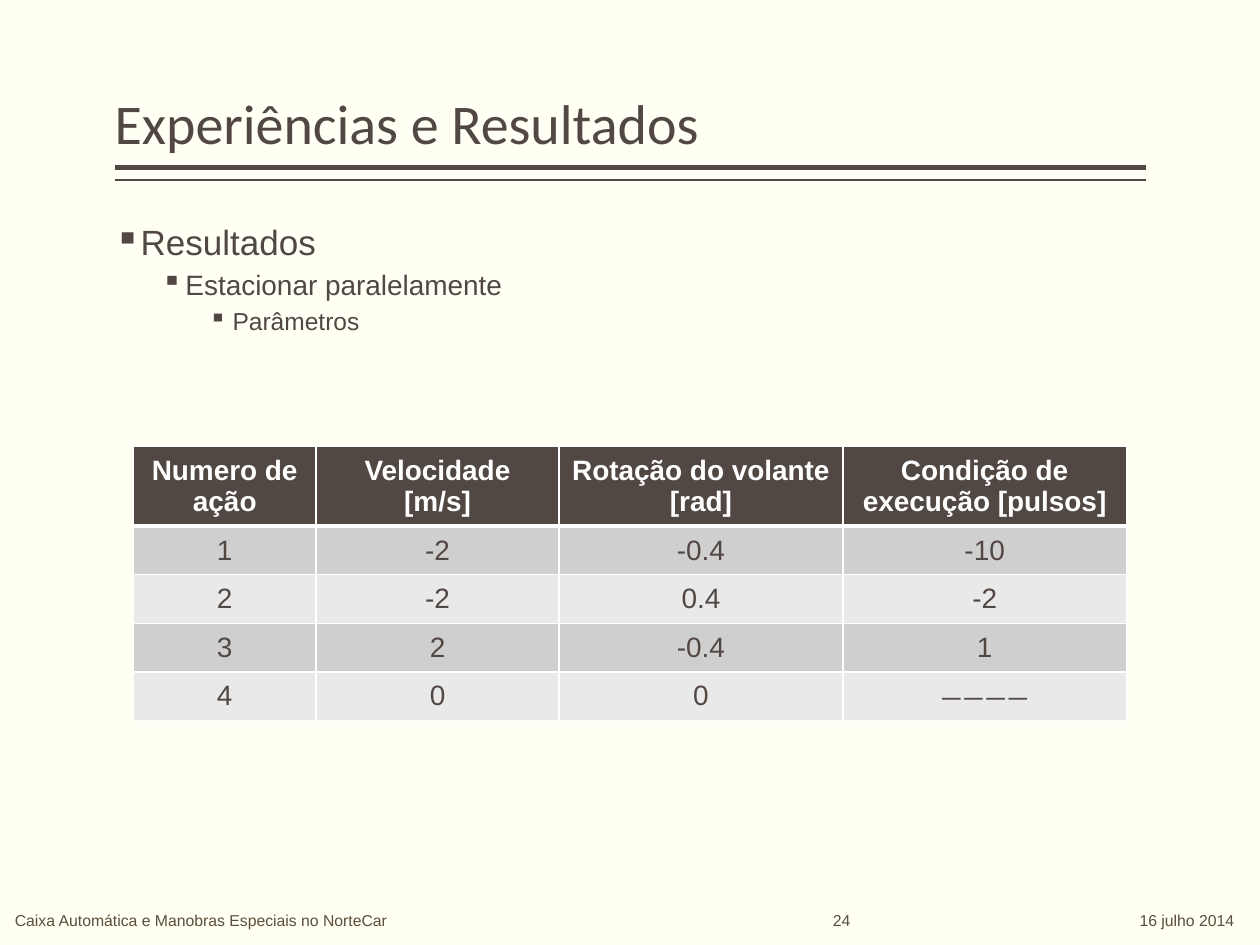
from dataclasses import dataclass

from lxml import etree
from pptx import Presentation
from pptx.dml.color import RGBColor
from pptx.enum.shapes import MSO_CONNECTOR
from pptx.enum.text import MSO_ANCHOR, PP_ALIGN
from pptx.oxml.ns import qn
from pptx.util import Cm, Pt

STRAIGHT = MSO_CONNECTOR.STRAIGHT
TOP, MIDDLE, BOTTOM = MSO_ANCHOR.TOP, MSO_ANCHOR.MIDDLE, MSO_ANCHOR.BOTTOM
CENTER = PP_ALIGN.CENTER


@dataclass(frozen=True)
class Theme:
    background: str = "FFFFF3"
    ink: str = "514843"
    footer_ink: str = "5C4E3A"
    white: str = "FFFFFF"
    bands: tuple = ("D0CFCF", "E9E9E9")
    heading_font: str = "Calibri"
    body_font: str = "Arial"
    dash_font: str = "Lato"
    title_size: int = 32
    level_sizes: tuple = (20, 16, 14)
    table_size: int = 16
    footer_size: int = 9


THEME = Theme()
LEFT, WIDTH = 2.31, 20.8
OUTLINE = ("Resultados", "Estacionar paralelamente", "Parâmetros")
COLUMN_WIDTHS = (3.68, 4.9, 5.72, 5.72)
HEADER_HEIGHT, ROW_HEIGHT = 1.6, 0.98
DASHES = "————"
ACTIONS = (
    ("Numero de ação", "Velocidade\v[m/s]", "Rotação do volante [rad]",
     "Condição de execução [pulsos]"),
    ("1", "-2", "-0.4", "-10"),
    ("2", "-2", "0.4", "-2"),
    ("3", "2", "-0.4", "1"),
    ("4", "0", "0", DASHES),
)


def style_runs(paragraph, size, color, font=THEME.body_font, bold=False):
    """Format every run of a paragraph."""
    for run in paragraph.runs:
        run.font.size = Pt(size)
        run.font.name = font
        run.font.bold = bold
        run.font.color.rgb = RGBColor.from_string(color)


def add_text(slide, text, left, top, width, height, anchor=TOP):
    """Add a wrapped text box without side insets and return its frame."""
    frame = slide.shapes.add_textbox(Cm(left), Cm(top), Cm(width), Cm(height)).text_frame
    frame.word_wrap = True
    frame.vertical_anchor = anchor
    frame.margin_left = frame.margin_right = 0
    frame.margin_top = frame.margin_bottom = Cm(0.1)
    frame.text = text
    for paragraph in frame.paragraphs:
        paragraph.line_spacing = 0.9
    return frame


def add_rule(slide, top, weight):
    """Draw a horizontal rule under the title."""
    rule = slide.shapes.add_connector(STRAIGHT, Cm(LEFT + WIDTH), Cm(top), Cm(LEFT), Cm(top))
    rule.line.width = Pt(weight)
    rule.line.color.rgb = RGBColor.from_string(THEME.ink)
    etree.SubElement(rule._element.spPr, qn("a:effectLst"))


def add_outline(slide):
    """Add the nested bullet list."""
    frame = add_text(slide, "\n".join(OUTLINE), LEFT, 4.44, WIDTH, 13.08)
    for level, (paragraph, size) in enumerate(zip(frame.paragraphs, THEME.level_sizes)):
        style_runs(paragraph, size, THEME.ink)
        paragraph.level = level
        paragraph.space_before = Pt(4.5 if level else 13.5)
        properties = paragraph._p.get_or_add_pPr()
        properties.set("marL", str(Cm(0.48 + 0.95 * level)))
        properties.set("indent", str(-Cm(0.48)))
        etree.SubElement(properties, qn("a:buChar"), char="▪")


def add_tab_stops(paragraph, stops):
    """Give a paragraph tab stops from pairs of position and alignment."""
    tabs = etree.SubElement(paragraph._p.get_or_add_pPr(), qn("a:tabLst"))
    for position, alignment in stops:
        etree.SubElement(tabs, qn("a:tab"), pos=str(Cm(position)), algn=alignment)


def set_borders(cell, top, bottom):
    """Draw white borders around a cell."""
    properties = cell._tc.get_or_add_tcPr()
    for side, weight in (("L", 1), ("R", 1), ("T", top), ("B", bottom)):
        border = etree.SubElement(properties, qn(f"a:ln{side}"), w=str(Pt(weight)))
        fill = etree.SubElement(border, qn("a:solidFill"))
        etree.SubElement(fill, qn("a:srgbClr"), val=THEME.white)


def fill_cell(cell, text, row):
    """Write and format one table cell."""
    header = row == 0
    set_borders(cell, 3 if row == 1 else 1, 3 if header else 1)
    cell.fill.solid()
    cell.fill.fore_color.rgb = RGBColor.from_string(
        THEME.ink if header else THEME.bands[(row - 1) % 2])
    cell.vertical_anchor = MIDDLE
    cell.margin_left = cell.margin_right = Cm(0.18)
    cell.margin_top = cell.margin_bottom = Cm(0.13)
    cell.text_frame.text = text
    paragraph = cell.text_frame.paragraphs[0]
    paragraph.alignment = CENTER
    style_runs(paragraph, THEME.table_size, THEME.white if header else THEME.ink,
               THEME.dash_font if text == DASHES else THEME.body_font, header)


def add_actions_table(slide):
    """Add the table of parking manoeuvre parameters."""
    heights = [HEADER_HEIGHT] + [ROW_HEIGHT] * (len(ACTIONS) - 1)
    table = slide.shapes.add_table(
        len(ACTIONS), len(COLUMN_WIDTHS), Cm(2.69), Cm(8.99),
        Cm(sum(COLUMN_WIDTHS)), Cm(sum(heights))).table
    for column, width in zip(table.columns, COLUMN_WIDTHS):
        column.width = Cm(width)
    for row, (values, height) in enumerate(zip(ACTIONS, heights)):
        table.rows[row].height = Cm(height)
        for column, value in enumerate(values):
            fill_cell(table.cell(row, column), value, row)


def add_footer(slide):
    """Add the presentation name, page number and date."""
    name = add_text(slide, "Caixa Automática e Manobras Especiais no NorteCar",
                    0.3, 18.31, 11.13, 0.7)
    page_and_date = add_text(slide, "\t24\t16 julho 2014", 11.53, 18.31, 13.54, 0.7)
    add_tab_stops(page_and_date.paragraphs[0], ((5.26, "l"), (13.35, "r")))
    for frame in (name, page_and_date):
        style_runs(frame.paragraphs[0], THEME.footer_size, THEME.footer_ink)


def main():
    """Build and save the slide."""
    presentation = Presentation()
    presentation.slide_width, presentation.slide_height = Cm(25.4), Cm(19.05)
    slide = presentation.slides.add_slide(presentation.slide_layouts[6])
    slide.background.fill.solid()
    slide.background.fill.fore_color.rgb = RGBColor.from_string(THEME.background)
    add_rule(slide, 3.38, 3)
    add_rule(slide, 3.63, 1)
    title = add_text(slide, "Experiências e Resultados", LEFT, 0.2, WIDTH, 3.05, BOTTOM)
    style_runs(title.paragraphs[0], THEME.title_size, THEME.ink, THEME.heading_font)
    add_outline(slide)
    add_actions_table(slide)
    add_footer(slide)
    presentation.save("out.pptx")


if __name__ == "__main__":
    main()
